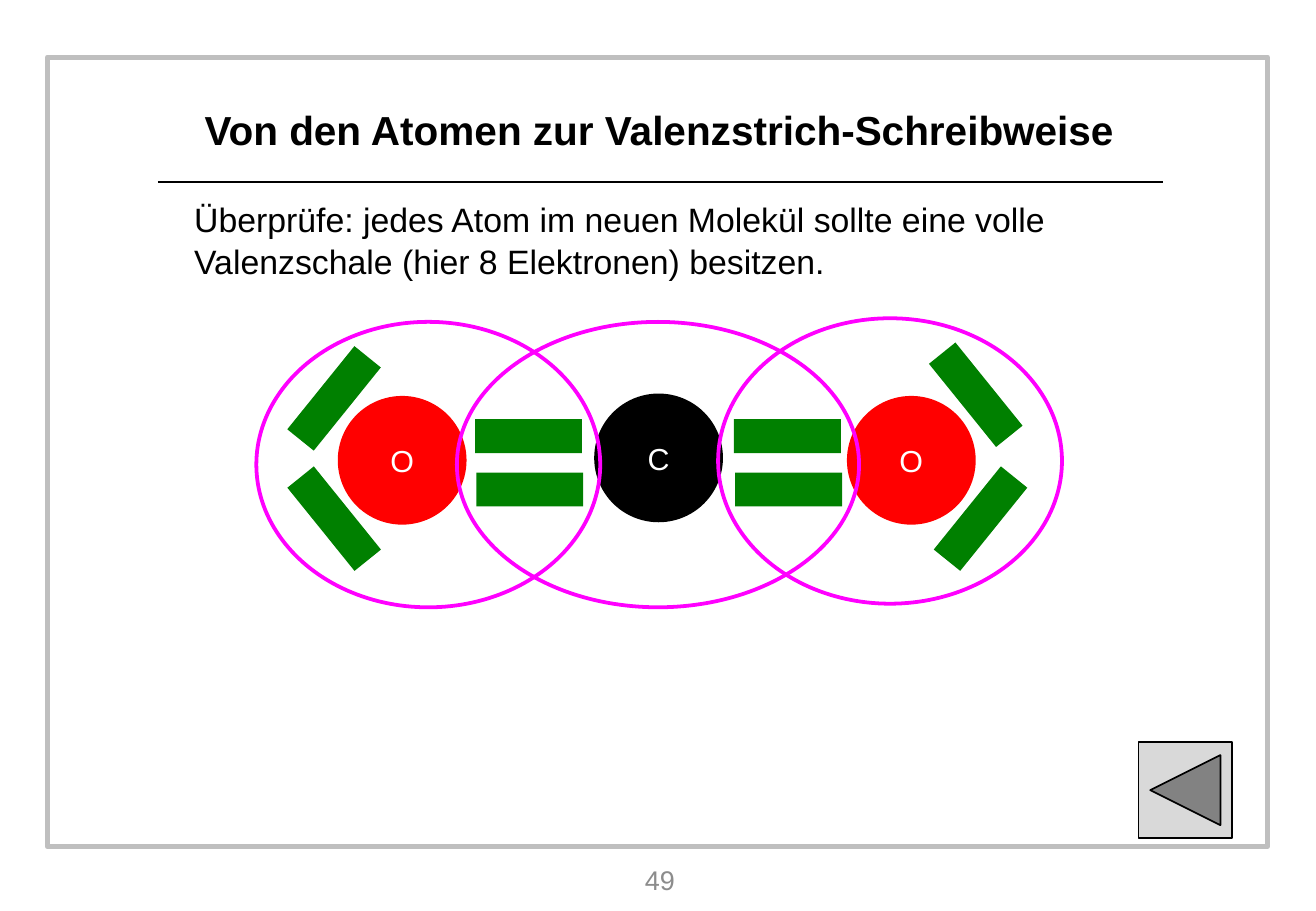
from pptx import Presentation
from pptx.dml.color import RGBColor
from pptx.enum.shapes import MSO_CONNECTOR, MSO_SHAPE
from pptx.enum.text import MSO_ANCHOR, PP_ALIGN
from pptx.oxml.ns import qn
from pptx.util import Inches, Pt
from lxml import etree

RECT, OVAL = MSO_SHAPE.RECTANGLE, MSO_SHAPE.OVAL
BACK = MSO_SHAPE.ACTION_BUTTON_BACK_OR_PREVIOUS
STRAIGHT = MSO_CONNECTOR.STRAIGHT
TOP, MIDDLE = MSO_ANCHOR.TOP, MSO_ANCHOR.MIDDLE
LEFT, CENTER = PP_ALIGN.LEFT, PP_ALIGN.CENTER

FONT = "Arial"
COLORS = {
    "black": "000000", "white": "FFFFFF", "red": "FF0000", "green": "008000",
    "pink": "FF00FF", "frame": "BFBFBF", "button": "D9D9D9", "number": "8C8C8C",
}
ATOM = 1.06
BOND = (0.88, 0.28)
TILT = 51.1


def color(name):
    """Return the named colour."""
    return RGBColor.from_string(COLORS[name])


class Board:
    """Holds the style and the current slide."""

    def __init__(self, deck):
        """Add a title-only slide."""
        self.slide = deck.slides.add_slide(deck.slide_layouts[5])
        self.shapes = self.slide.shapes

    def label(self, shape, text, size, ink="black", align=CENTER, anchor=MIDDLE, bold=False):
        """Fill a shape with one styled paragraph."""
        frame = shape.text_frame
        frame.text = text
        frame.word_wrap = True
        frame.vertical_anchor = anchor
        para = frame.paragraphs[0]
        para.alignment = align
        font = para.runs[0].font
        font.name, font.size, font.bold = FONT, Pt(size), bold
        font.color.rgb = color(ink)
        return para

    def title(self, box, text):
        """Place and format the title."""
        shape = self.shapes.title
        shape.left, shape.top, shape.width, shape.height = map(Inches, box)
        self.label(shape, text, 24, bold=True)

    def text(self, box, text, size, **style):
        """Add a text box."""
        return self.label(self.shapes.add_textbox(*map(Inches, box)), text, size, **style)

    def shape(self, kind, box, fill=None, line=None, width=1, home=None):
        """Add a preset shape to the slide or to a group."""
        shape = (home or self.shapes).add_shape(kind, *map(Inches, box))
        shape.shadow.inherit = False
        if fill:
            shape.fill.solid()
            shape.fill.fore_color.rgb = color(fill)
        else:
            shape.fill.background()
        if line:
            shape.line.color.rgb = color(line)
            shape.line.width = Pt(width)
        else:
            shape.line.fill.background()
        return shape

    def rule(self, ends, width):
        """Add a straight black line."""
        line = self.shapes.add_connector(STRAIGHT, *map(Inches, ends))
        line.line.color.rgb = color("black")
        line.line.width = Pt(width)
        etree.SubElement(line._element.spPr, qn("a:effectLst"))

    def bond(self, home, left, top, turn=0):
        """Add an electron pair."""
        self.shape(RECT, (left, top, *BOND), "green", home=home).rotation = turn

    def atom(self, home, left, top, fill, name):
        """Add a labelled atom."""
        disc = self.shape(OVAL, (left, top, ATOM, ATOM), fill, home=home)
        self.label(disc, name, 18, "white")


def main():
    """Build the slide."""
    deck = Presentation()
    deck.slide_width, deck.slide_height = Inches(10.83), Inches(7.5)
    board = Board(deck)
    board.shape(RECT, (0.39, 0.47, 10.04, 6.5), line="frame", width=3)
    board.rule((1.3, 1.5, 9.57, 1.5), 1.5)
    board.title((1.49, 0.67, 7.87, 0.79), "Von den Atomen zur Valenzstrich-Schreibweise")
    body = board.text(
        (1.5, 1.57, 7.87, 4.72),
        "Überprüfe: jedes Atom im neuen Molekül sollte eine volle "
        "Valenzschale (hier 8 Elektronen) besitzen.",
        20, align=LEFT, anchor=TOP)
    body.line_spacing = 1.05
    board.text((4.21, 7.05, 2.44, 0.39), "49", 16, ink="number")

    home = board.shapes.add_group_shape().shapes
    for left, top, fill, name in (
            (4.89, 3.24, "black", "C"), (6.97, 3.26, "red", "O"), (2.78, 3.26, "red", "O")):
        board.atom(home, left, top, fill, name)
    for left in (3.91, 6.04):
        for step in range(2):
            board.bond(home, left + 0.01 * step, 3.45 + 0.44 * step)
    for left, top, turn in (
            (2.31, 3.14, -TILT), (2.31, 4.13, TILT), (7.59, 3.11, TILT), (7.63, 4.13, -TILT)):
        board.bond(home, left, top, turn)

    for left, top, width in ((3.76, 2.65, 3.31), (2.11, 2.65, 2.83), (5.91, 2.62, 2.83)):
        board.shape(OVAL, (left, top, width, 2.35), line="pink", width=2.25)
    board.shape(BACK, (9.37, 6.11, 0.77, 0.79), "button", "black")
    deck.save("out.pptx")


if __name__ == "__main__":
    main()
